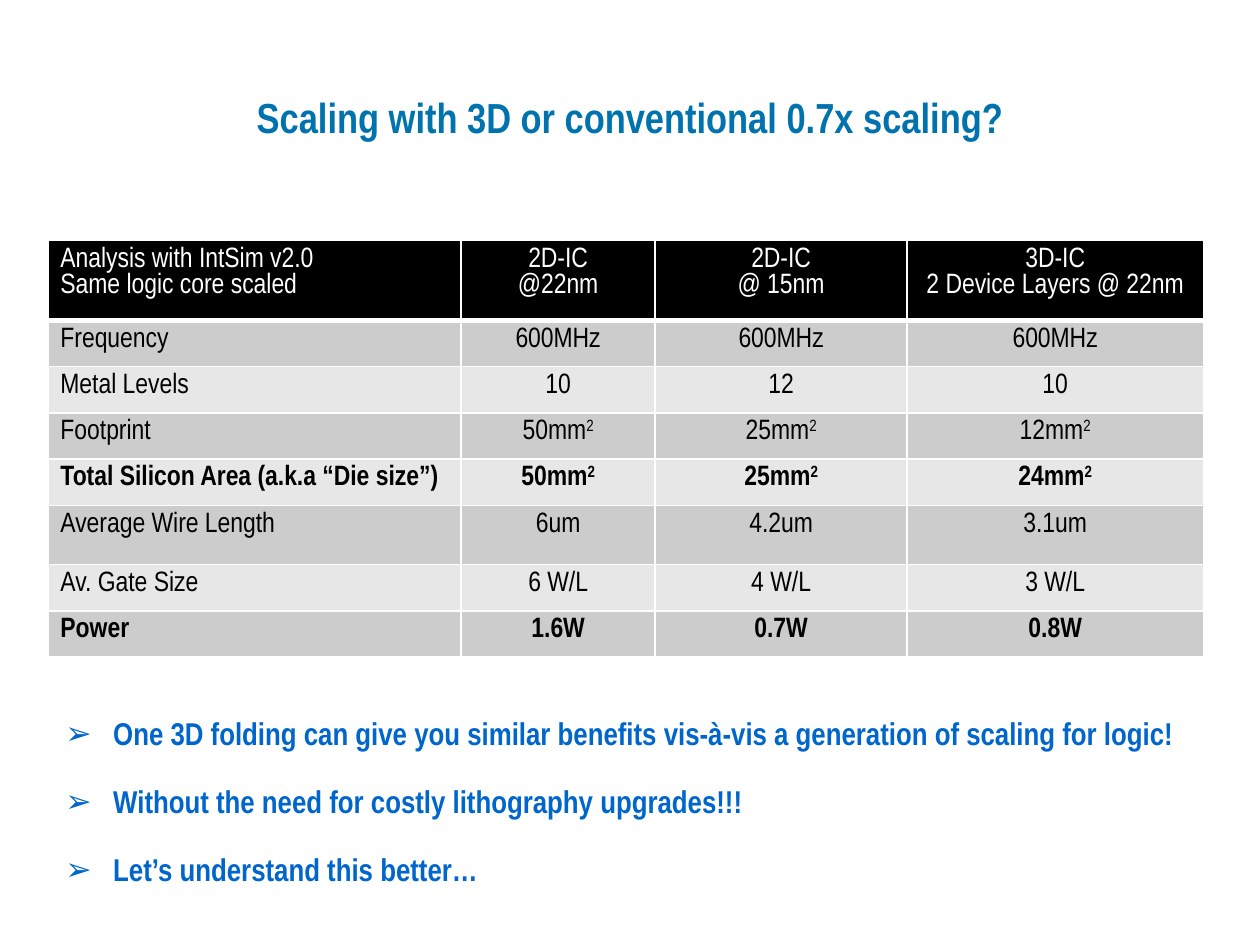
from dataclasses import dataclass

from lxml import etree
from pptx import Presentation
from pptx import util as u
from pptx.dml.color import RGBColor
from pptx.enum import text
from pptx.oxml.ns import qn


@dataclass(frozen=True)
class Theme:
    font: str = "Arial Narrow"
    title: str = "0073AE"
    point: str = "0066CC"
    head: str = "000000"
    ink: str = "000000"
    white: str = "FFFFFF"
    bands: tuple = ("CCCCCC", "E7E7E7")
    title_size: int = 24
    point_size: int = 18
    cell_size: int = 16


HEAD = [
    "Analysis with IntSim v2.0\nSame logic core scaled",
    "2D-IC\n@22nm",
    "2D-IC\n@ 15nm",
    "3D-IC\n2 Device Layers @ 22nm",
]
ROWS = [
    ["Frequency", "600MHz", "600MHz", "600MHz"],
    ["Metal Levels", "10", "12", "10"],
    ["Footprint", "50mm^2", "25mm^2", "12mm^2"],
    ["Total Silicon Area (a.k.a “Die size”)", "50mm^2", "25mm^2", "24mm^2"],
    ["Average Wire Length", "6um", "4.2um", "3.1um"],
    ["Av. Gate Size", "6 W/L", "4 W/L", "3 W/L"],
    ["Power", "1.6W", "0.7W", "0.8W"],
]
BOLD = {4, 7}
WIDTHS = [3.28, 1.54, 2, 2.35]
HEIGHTS = [0.57, 0.36, 0.36, 0.36, 0.36, 0.47, 0.36, 0.36]
POINTS = [
    "One 3D folding can give you similar benefits vis-à-vis a generation of scaling for logic!",
    "Without the need for costly lithography upgrades!!!",
    "Let’s understand this better…",
]


class Deck:
    def __init__(self, theme, slide):
        self.theme = theme
        self.slide = slide

    def style(self, para, size, color, bold=False):
        font = para.font
        font.name = self.theme.font
        font.size = u.Pt(size)
        font.bold = bold
        font.color.rgb = RGBColor.from_string(color)

    def box(self, left, top, width, height):
        shape = self.slide.shapes.add_textbox(*map(u.Inches, (left, top, width, height)))
        shape.text_frame.word_wrap = True
        return shape.text_frame

    def title(self, words, *place):
        frame = self.box(*place)
        frame.vertical_anchor = text.MSO_ANCHOR.MIDDLE
        para = frame.paragraphs[0]
        para.text = words
        para.alignment = text.PP_ALIGN.CENTER
        self.style(para, self.theme.title_size, self.theme.title, True)

    def points(self, lines, *place):
        frame = self.box(*place)
        frame.margin_top = u.Inches(0.14)
        frame.text = "\n".join(lines)
        for i, para in enumerate(frame.paragraphs):
            props = para._p.get_or_add_pPr()
            props.set("marL", str(u.Inches(0.38)))
            props.set("indent", str(-u.Inches(0.38)))
            etree.SubElement(props, qn("a:buFont"), typeface="Arial")
            etree.SubElement(props, qn("a:buChar"), char="➢")
            para.line_spacing = 1.5
            para.space_before = u.Pt(6.4 if i else 0)
            self.style(para, self.theme.point_size, self.theme.point, True)

    def edges(self, cell, top, bottom):
        """Draw the four cell borders, given the top and bottom widths."""
        props = cell._tc.get_or_add_tcPr()
        sides = {"lnL": 1, "lnR": 1, "lnT": top, "lnB": bottom}
        for i, (side, width) in enumerate(sides.items()):
            line = etree.Element(qn(f"a:{side}"), w=str(u.Pt(width)))
            fill = etree.SubElement(line, qn("a:solidFill"))
            etree.SubElement(fill, qn("a:srgbClr"), val=self.theme.white)
            props.insert(i, line)

    def cell(self, cell, words, fill, color, bold, center):
        """Fill a cell; a caret in the words starts a superscript."""
        cell.fill.solid()
        cell.fill.fore_color.rgb = RGBColor.from_string(fill)
        base, _, power = words.partition("^")
        cell.text = base
        if power:
            run = cell.text_frame.paragraphs[0].add_run()
            run.text = power
            run.font._element.set("baseline", "30000")
        for para in cell.text_frame.paragraphs:
            para.alignment = text.PP_ALIGN.CENTER if center else text.PP_ALIGN.LEFT
            self.style(para, self.theme.cell_size, color, bold)

    def table(self, rows, widths, heights, left, top):
        place = map(u.Inches, (left, top, sum(widths), sum(heights)))
        table = self.slide.shapes.add_table(len(rows), len(widths), *place).table
        table.first_row = table.horz_banding = False
        for col, width in zip(table.columns, widths):
            col.width = u.Inches(width)
        for r, (row, height) in enumerate(zip(rows, heights)):
            table.rows[r].height = u.Inches(height)
            fill = self.theme.bands[(r - 1) % 2] if r else self.theme.head
            color = self.theme.ink if r else self.theme.white
            for c, words in enumerate(row):
                cell = table.cell(r, c)
                self.cell(cell, words, fill, color, r in BOLD, c > 0)
                self.edges(cell, 3 if r == 1 else 1, 3 if r == 0 else 1)


def main():
    show = Presentation()
    show.slide_width, show.slide_height = u.Inches(10), u.Inches(7.5)
    deck = Deck(Theme(), show.slides.add_slide(show.slide_layouts[6]))
    deck.title("Scaling with 3D or conventional 0.7x scaling?", 0.5, 0.3, 9, 1.25)
    deck.points(POINTS, 0.42, 5.38, 9.31, 0.7)
    deck.table([HEAD] + ROWS, WIDTHS, HEIGHTS, 0.38, 1.91)
    show.save("out.pptx")


if __name__ == "__main__":
    main()
